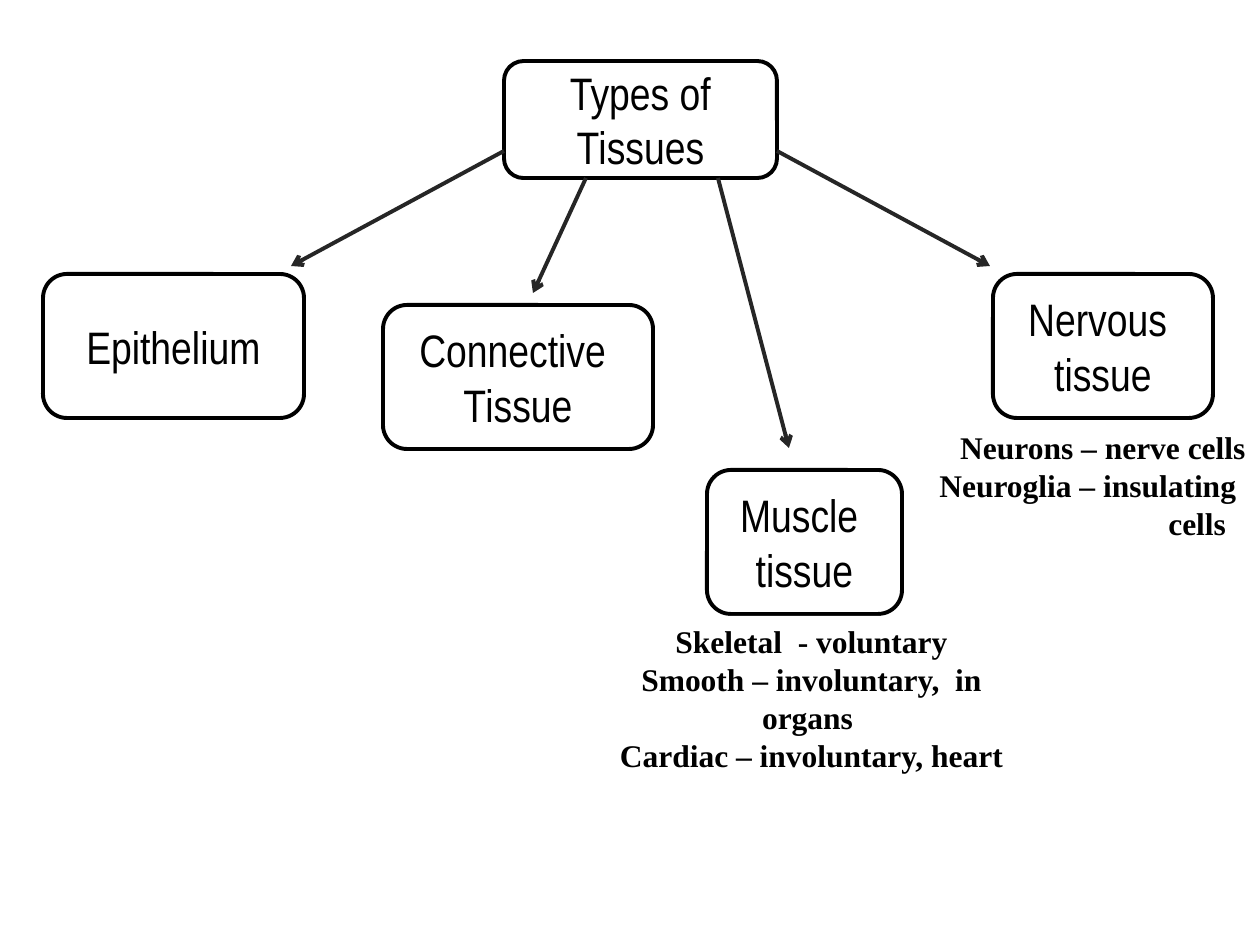
import pptx
import pptx.dml.color
import pptx.enum.shapes
import pptx.enum.text
import pptx.oxml.ns
import pptx.util
from lxml import etree

PX = 914400 // 126
INK = {"black": "000000", "white": "FFFFFF", "arrow": "262626"}
SHAPE = pptx.enum.shapes.MSO_SHAPE
ALIGN = pptx.enum.text.PP_ALIGN
ANCHOR = pptx.enum.text.MSO_ANCHOR


def color(name):
    return pptx.dml.color.RGBColor.from_string(INK[name])


def add_box(kind, rect, text, font, size, bold, anchor):
    """Add a white shape with centred text, rect being left, top, width, height in px."""
    box = slide.shapes.add_shape(kind, *[n * PX for n in rect])
    box.shadow.inherit = False
    box.fill.solid()
    box.fill.fore_color.rgb = color("white")
    frame = box.text_frame
    frame.word_wrap = True
    frame.vertical_anchor = anchor
    frame.text = text
    for para in frame.paragraphs:
        para.alignment = ALIGN.CENTER
        for run in para.runs:
            run.font.name = font
            run.font.size = pptx.util.Pt(size)
            run.font.bold = bold
            run.font.color.rgb = color("black")
    return box


deck = pptx.Presentation()
deck.slide_width = 1260 * PX
deck.slide_height = 945 * PX
slide = deck.slides.add_slide(deck.slide_layouts[6])

# Tissue boxes
nodes = [
    ((504, 61, 273, 117), "Types of Tissues"),
    ((43, 274, 261, 144), "Epithelium"),
    ((383, 305, 270, 144), "Connective \nTissue"),
    ((707, 470, 195, 144), "Muscle \ntissue"),
    ((993, 274, 220, 144), "Nervous \ntissue"),
]
for rect, text in nodes:
    node = add_box(SHAPE.ROUNDED_RECTANGLE, rect, text,
                   "Arial Narrow", 26, False, ANCHOR.MIDDLE)
    node.line.color.rgb = color("black")
    node.line.width = pptx.util.Pt(2.25)

# Arrows from the title box to each tissue
arrows = [
    (504, 151, 291, 266),
    (586, 178, 533, 293),
    (718, 178, 789, 448),
    (777, 151, 990, 266),
]
for ends in arrows:
    arrow = slide.shapes.add_connector(
        pptx.enum.shapes.MSO_CONNECTOR.STRAIGHT, *[n * PX for n in ends])
    arrow.line.color.rgb = color("arrow")
    arrow.line.width = pptx.util.Pt(2.25)
    tip = etree.SubElement(arrow.line._get_or_add_ln(), pptx.oxml.ns.qn("a:tailEnd"))
    tip.set("type", "arrow")
    etree.SubElement(arrow._element.spPr, pptx.oxml.ns.qn("a:effectLst"))

# Notes under the nervous and muscle boxes
notes = [
    ((927, 422, 352, 127),
     "Neurons – nerve cells\nNeuroglia – insulating\ncells"),
    ((586, 616, 451, 165),
     "Skeletal  - voluntary\nSmooth – involuntary,  in organs \n"
     "Cardiac – involuntary, heart"),
]
frames = []
for rect, text in notes:
    note = add_box(SHAPE.RECTANGLE, rect, text,
                   "Times New Roman", 18, True, ANCHOR.TOP)
    note.line.fill.background()
    frames.append(note.text_frame)

# The neuroglia entry starts at the left and its last word is indented
for para, indent in zip(frames[0].paragraphs[1:], (0, 229)):
    para.alignment = ALIGN.LEFT
    para._p.get_or_add_pPr().set("marL", str(indent * PX))

deck.save("out.pptx")
